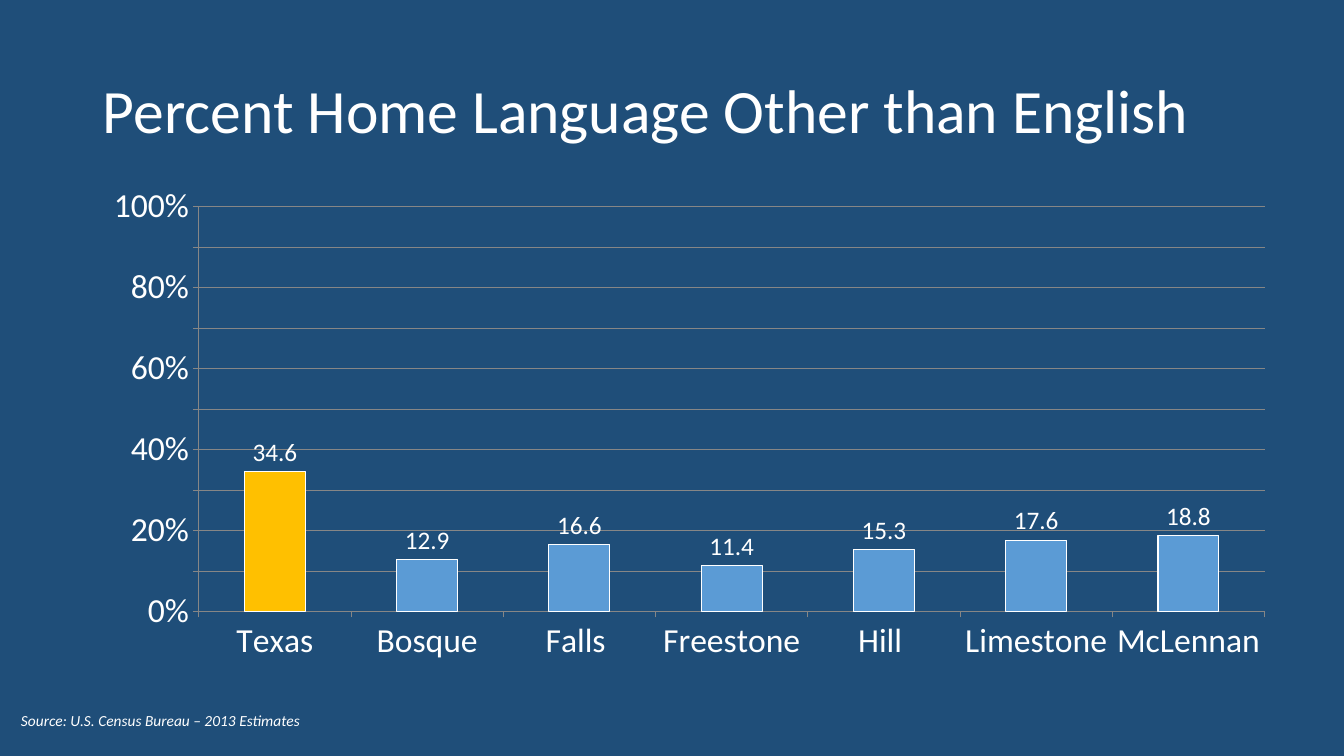
"""Build the slide on home languages other than English."""
from typing import NamedTuple

from pptx import Presentation
from pptx.chart.axis import CategoryAxis, ValueAxis
from pptx.chart.data import CategoryChartData
from pptx.dml.color import RGBColor
from pptx.dml.fill import FillFormat
from pptx.dml.line import LineFormat
from pptx.enum.chart import XL_CHART_TYPE, XL_LABEL_POSITION, XL_TICK_MARK
from pptx.enum.text import MSO_ANCHOR, MSO_AUTO_SIZE
from pptx.slide import Slide
from pptx.text.text import Font
from pptx.util import Inches, Pt

NAVY, WHITE, BLUE, GOLD, GRAY = "1F4E79", "FFFFFF", "5B9BD5", "FFC000", "868686"


class Region(NamedTuple):
    name: str
    percent: float
    color: str = BLUE


REGIONS = [
    Region("Texas", 34.6, GOLD),
    Region("Bosque", 12.9),
    Region("Falls ", 16.6),
    Region("Freestone", 11.4),
    Region("Hill ", 15.3),
    Region("Limestone", 17.6),
    Region("McLennan", 18.8),
]


def set_fill(fill: FillFormat, color: str) -> None:
    fill.solid()
    fill.fore_color.rgb = RGBColor.from_string(color)


def set_line(line: LineFormat, color: str) -> None:
    set_fill(line.fill, color)
    line.width = Pt(0.75)


def set_font(font: Font, size: float, italic: bool = False) -> None:
    font.name = "Calibri"
    font.size = Pt(size)
    font.italic = italic
    font.bold = False
    set_fill(font.fill, WHITE)


def style_axis(axis: CategoryAxis | ValueAxis) -> None:
    axis.major_tick_mark = XL_TICK_MARK.OUTSIDE
    axis.minor_tick_mark = XL_TICK_MARK.NONE
    set_font(axis.tick_labels.font, 24)
    set_line(axis.format.line, GRAY)


def add_title(slide: Slide) -> None:
    title = slide.shapes.title
    title.left, title.top = Inches(0.92), Inches(0.4)
    title.width, title.height = Inches(11.5), Inches(1.45)
    title.text_frame.text = "Percent Home Language Other than English"
    title.text_frame.word_wrap = True
    title.text_frame.vertical_anchor = MSO_ANCHOR.MIDDLE
    paragraph = title.text_frame.paragraphs[0]
    paragraph.alignment = 1
    paragraph.line_spacing = 0.9
    set_font(paragraph.font, 44)


def add_language_chart(slide: Slide) -> None:
    data = CategoryChartData(number_format="#,##0.0")
    data.categories = [region.name for region in REGIONS]
    data.add_series("Series 1", [region.percent for region in REGIONS])
    chart = slide.shapes.add_chart(
        XL_CHART_TYPE.COLUMN_CLUSTERED,
        Inches(0.89), Inches(1.75), Inches(11.89), Inches(4.92), data,
    ).chart
    chart.has_legend = chart.has_title = False
    set_font(chart.font, 18)
    style_axis(chart.category_axis)

    value_axis = chart.value_axis
    style_axis(value_axis)
    value_axis.minimum_scale, value_axis.maximum_scale = 0, 100
    value_axis.major_unit = 10
    value_axis.has_major_gridlines = True
    set_line(value_axis.major_gridlines.format.line, GRAY)
    value_axis.tick_labels.number_format = "0\\%"
    value_axis.tick_labels.number_format_is_linked = False

    plot = chart.plots[0]
    plot.gap_width = 150
    plot.vary_by_categories = False
    series = plot.series[0]
    set_fill(series.format.fill, BLUE)
    set_line(series.format.line, WHITE)
    for index, region in enumerate(REGIONS):
        if region.color != BLUE:
            point = series.points[index]
            set_fill(point.format.fill, region.color)
            set_line(point.format.line, WHITE)

    labels = series.data_labels
    labels.show_value = True
    labels.number_format = "#,##0.0"
    labels.number_format_is_linked = False
    labels.position = XL_LABEL_POSITION.OUTSIDE_END
    set_font(labels.font, 18)


def add_source_note(slide: Slide) -> None:
    note = slide.shapes.add_textbox(Inches(0.11), Inches(7.01), Inches(3), Inches(0.29))
    note.text_frame.text = "Source: U.S. Census Bureau – 2013 Estimates"
    note.text_frame.word_wrap = False
    note.text_frame.auto_size = MSO_AUTO_SIZE.SHAPE_TO_FIT_TEXT
    set_font(note.text_frame.paragraphs[0].font, 11, italic=True)


def main() -> None:
    presentation = Presentation()
    presentation.slide_width, presentation.slide_height = Inches(13.33), Inches(7.5)
    slide = presentation.slides.add_slide(presentation.slide_layouts[5])
    set_fill(slide.background.fill, NAVY)
    add_title(slide)
    add_language_chart(slide)
    add_source_note(slide)
    presentation.save("out.pptx")


if __name__ == "__main__":
    main()
